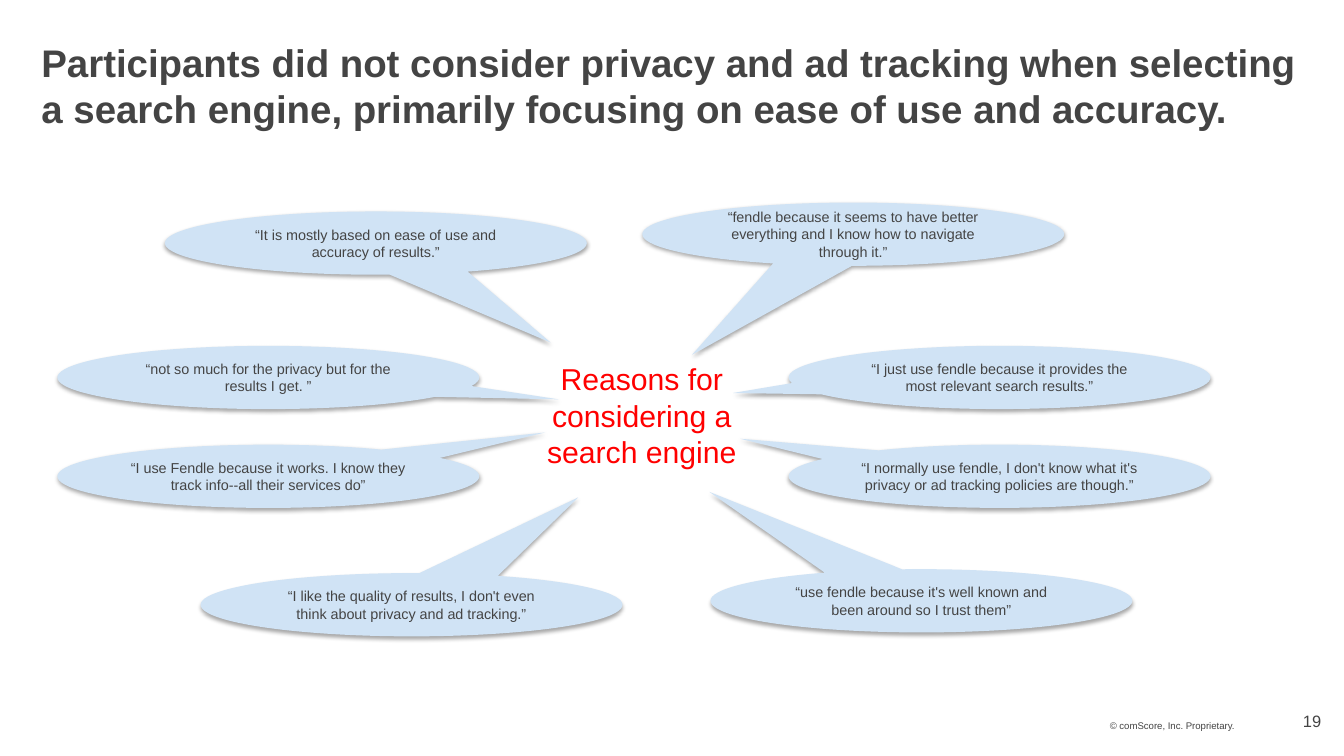
from lxml.etree import SubElement as Sub
from pptx import Presentation
from pptx.dml.color import RGBColor as Rgb
from pptx.enum.shapes import MSO_SHAPE as Kind
from pptx.enum.text import MSO_ANCHOR as Anchor, PP_ALIGN as Align
from pptx.oxml.ns import qn
from pptx.util import Pt

GREY, RED, BLUE = "444444", "FF0000", "D0E3F5"
WIDE, HIGH = 307.4, 46.1
LEFT, RIGHT = 41.8, 574.6
UPPER, LOWER = 252, 324

QUOTES = [
    (468, 147.6, -0.382, 1.906,
     "“fendle because it seems to have better everything and I know how to navigate through it.”"),
    (517.7, 414.7, -0.503, -1.723,
     "“use fendle because it's well known and been around so I trust them”"),
    (RIGHT, LOWER, -0.615, -0.594,
     "“I normally use fendle, I don't know what it's privacy or ad tracking policies are though.”"),
    (RIGHT, UPPER, -0.632, 0.246,
     "“I just use fendle because it provides the most relevant search results.”"),
    (120.2, 154.1, 0.414, 1.571,
     "“It is mostly based on ease of use and accuracy of results.”"),
    (LEFT, UPPER, 0.688, 0.346,
     "“not so much for the privacy but for the results I get. ”"),
    (LEFT, LOWER, 0.656, -0.693,
     "“I use Fendle because it works. I know they track info--all their services do”"),
    (146.2, 417.6, 0.395, -1.698,
     "“I like the quality of results, I don't even think about privacy and ad tracking.”"),
]


def paint(part, tone):
    """Give a fill or font colour format a hex colour."""
    part.rgb = Rgb.from_string(tone)


def write(shape, text, size, tone=GREY, align=Align.LEFT, anchor=Anchor.MIDDLE,
          pads=(7.2, 3.6, 7.2, 3.6), bold=False):
    """Put one styled paragraph in a shape and return it."""
    frame = shape.text_frame
    frame.word_wrap = True
    frame.vertical_anchor = anchor
    (frame.margin_left, frame.margin_top,
     frame.margin_right, frame.margin_bottom) = map(Pt, pads)
    para = frame.paragraphs[0]
    para.text = text
    para.alignment = align
    font = para.font
    font.name, font.size, font.bold = "Arial", Pt(size), bold
    paint(font.color, tone)
    return para


def label(slide, box, text, size, **style):
    """Add a text box and return its paragraph."""
    return write(slide.shapes.add_textbox(*map(Pt, box)), text, size, **style)


def shade(shape):
    """Add a soft shadow below a shape."""
    shape.shadow.inherit = False
    effects = shape.element.spPr.find(qn("a:effectLst"))
    outer = Sub(effects, qn("a:outerShdw"), blurRad=str(Pt(3.1)), dist=str(Pt(1.8)),
                dir="5400000", rotWithShape="0")
    black = Sub(outer, qn("a:srgbClr"), val="000000")
    Sub(black, qn("a:alpha"), val="35000")


def quote(slide, left, top, tip_x, tip_y, text):
    """Add a speech bubble whose tip is offset from its centre."""
    bubble = slide.shapes.add_shape(Kind.OVAL_CALLOUT, Pt(left), Pt(top), Pt(WIDE), Pt(HIGH))
    bubble.adjustments[0] = tip_x
    bubble.adjustments[1] = tip_y
    bubble.fill.solid()
    paint(bubble.fill.fore_color, BLUE)
    bubble.line.fill.background()
    shade(bubble)
    write(bubble, text, 10.5, align=Align.CENTER)


def main():
    """Build and save the slide."""
    deck = Presentation()
    deck.slide_width, deck.slide_height = Pt(979.2), Pt(550.8)
    slide = deck.slides.add_slide(deck.slide_layouts[6])
    legal = label(slide, (808.6, 500.4, 108, 36.7), "© comScore, Inc. Proprietary.", 7,
                  anchor=Anchor.BOTTOM, pads=(0, 4.3, 0, 4.3))
    legal.line_spacing = Pt(7.9)
    label(slide, (901.4, 508.3, 78.5, 28.8), "19", 12, align=Align.RIGHT,
          anchor=Anchor.BOTTOM, pads=(17.3, 4.3, 17.3, 4.3))
    label(slide, (21.6, 19.4, 936, 90),
          "Participants did not consider privacy and ad tracking when selecting "
          "a search engine, primarily focusing on ease of use and accuracy.",
          28, pads=(8.6, 0, 8.6, 4.3), bold=True)
    for item in QUOTES:
        quote(slide, *item)
    label(slide, (368.6, 259.2, 198, 87.1), "Reasons for considering a search engine", 22,
          tone=RED, align=Align.CENTER, anchor=Anchor.TOP)
    deck.save("out.pptx")


if __name__ == "__main__":
    main()
